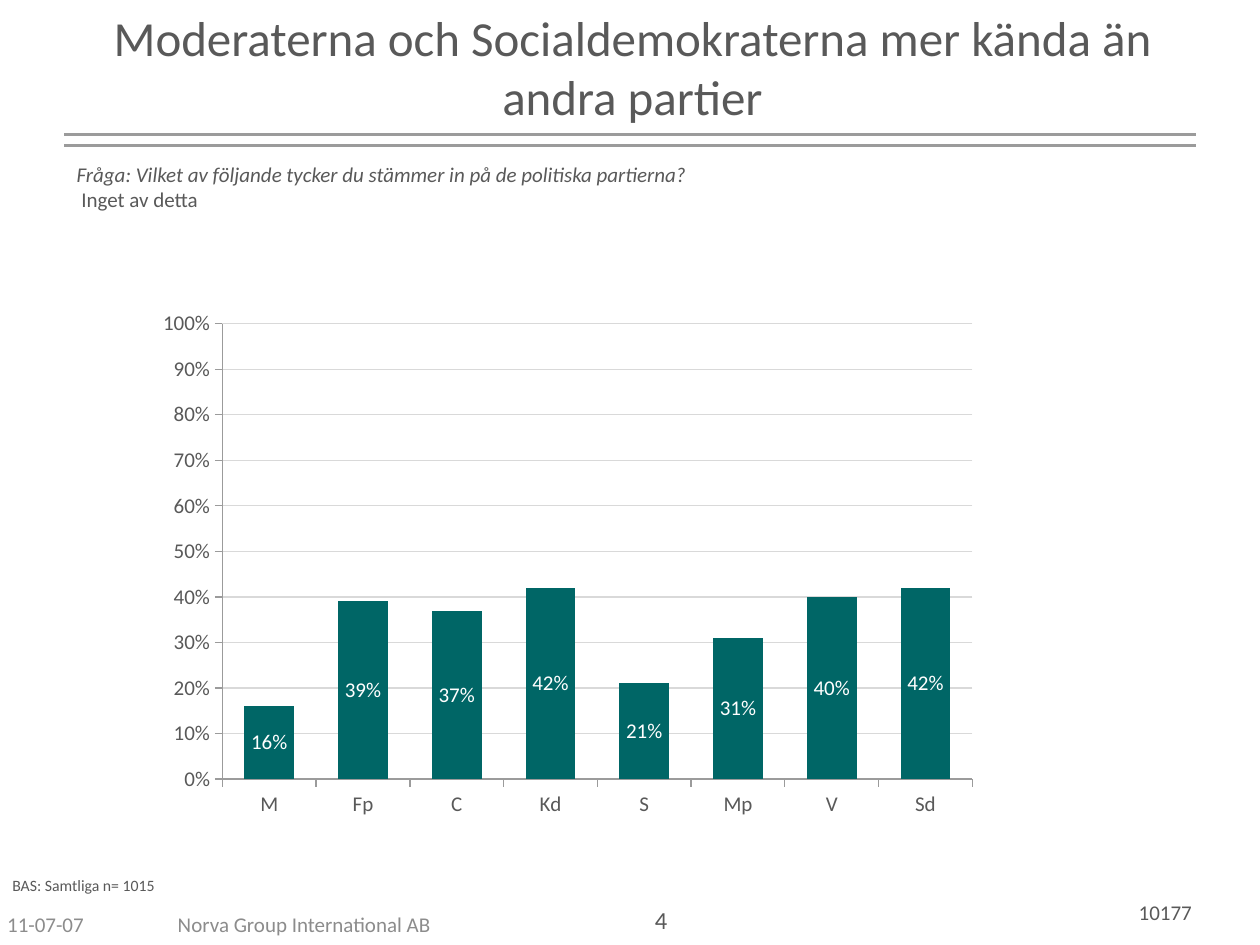
from lxml import etree
from pptx import Presentation
from pptx.chart.data import CategoryChartData
from pptx.dml.color import RGBColor
from pptx.enum.chart import XL_CHART_TYPE as ChartType, XL_LABEL_POSITION as LabelPosition
from pptx.enum.chart import XL_TICK_MARK as TickMark
from pptx.enum.shapes import MSO_CONNECTOR as Connector
from pptx.enum.text import MSO_ANCHOR as Anchor, PP_ALIGN as Align
from pptx.oxml import parse_xml
from pptx.oxml.ns import nsdecls, qn
from pptx.util import Pt

COLORS = {"text": "595959", "footer": "8C8C8C", "rule": "9B9B9B",
          "grid": "D9D9D9", "bar": "006666", "label": "FFFFFF"}
FONT = "Calibri"


def color(name):
    return RGBColor.from_string(COLORS[name])


def write(box, *parts, size=12, ink="text", align=Align.LEFT, anchor=Anchor.TOP, italics=()):
    frame = box.text_frame
    frame.word_wrap = True
    frame.vertical_anchor = anchor
    para = frame.paragraphs[0]
    para.alignment = align
    for index, part in enumerate(parts):
        if index:
            para.add_line_break()
        span = para.add_run()
        span.text = part
        span.font.name = FONT
        span.font.size = Pt(size)
        span.font.color.rgb = color(ink)
        span.font.italic = index in italics


deck = Presentation()
deck.slide_width, deck.slide_height = Pt(720), Pt(540)
page = deck.slides.add_slide(deck.slide_layouts[5])

for y in (77, 83):
    rule = page.shapes.add_connector(Connector.STRAIGHT, Pt(36.7), Pt(y), Pt(683.3), Pt(y))
    rule.line.color.rgb = color("rule")
    rule.line.width = Pt(1.5)
    etree.SubElement(rule._element.spPr, qn("a:effectLst"))

title = page.shapes.title
title.left, title.top, title.width, title.height = Pt(37.4), Pt(0.7), Pt(648), Pt(90)
write(title, "Moderaterna och Socialdemokraterna mer kända än andra partier",
      size=28, align=Align.CENTER)

texts = [
    ((36.7, 88.6, 646.6, 51), ["Fråga: Vilket av följande tycker du stämmer in på de politiska partierna?",
                               " Inget av detta"], {"italics": (0,)}),
    ((0, 496.8, 244, 18), ["BAS: Samtliga n= 1015"], {"size": 9}),
    ((-3, 513.4, 168, 28.8), ["11-07-07"], {"ink": "footer", "anchor": Anchor.MIDDLE}),
    ((59.8, 513.4, 228, 28.8), ["Norva Group International AB"],
     {"ink": "footer", "align": Align.CENTER, "anchor": Anchor.MIDDLE}),
    ((293.8, 513.4, 168, 28.8), ["4"], {"size": 14, "align": Align.CENTER}),
    ((501, 510.5, 187.2, 21.6), ["10177"], {"align": Align.RIGHT}),
]
for place, parts, style in texts:
    write(page.shapes.add_textbox(*map(Pt, place)), *parts, **style)

data = CategoryChartData(number_format="0%")
data.categories = ["M", "Fp", "C", "Kd", "S", "Mp", "V", "Sd"]
data.add_series("Series 1", [0.16, 0.39, 0.37, 0.42, 0.21, 0.31, 0.4, 0.42])
chart = page.shapes.add_chart(ChartType.COLUMN_STACKED, Pt(87.8), Pt(133.9),
                              Pt(553.7), Pt(357.1), data).chart
chart.has_title = False
chart.has_legend = False
chart.font.name = FONT
chart.font.size = Pt(18)
chart.font.color.rgb = color("text")

for axis in (chart.category_axis, chart.value_axis):
    axis.major_tick_mark = TickMark.OUTSIDE
    axis.minor_tick_mark = TickMark.NONE
    axis.format.line.color.rgb = color("rule")
    axis.tick_labels.font.name = FONT
    axis.tick_labels.font.size = Pt(12)
    axis.tick_labels.font.color.rgb = color("text")

scale = chart.value_axis
scale.minimum_scale, scale.maximum_scale, scale.major_unit = 0, 1, 0.1
scale.tick_labels.number_format = "0%"
scale.tick_labels.number_format_is_linked = False
scale.has_major_gridlines = True
scale.major_gridlines.format.line.color.rgb = color("grid")
scale.major_gridlines.format.line.width = Pt(0.75)

plot = chart.plots[0]
plot.gap_width, plot.overlap = 89, 100
plot.vary_by_categories = False
bars = plot.series[0]
bars.format.fill.solid()
bars.format.fill.fore_color.rgb = color("bar")
labels = bars.data_labels
labels.show_value = True
labels.position = LabelPosition.CENTER
labels.number_format = "0%"
labels.number_format_is_linked = False
labels.font.name = FONT
labels.font.size = Pt(12)
labels.font.color.rgb = color("label")

area = chart._chartSpace.chart.plotArea
for old in area.findall(qn("c:layout")):
    area.remove(old)
edges = "".join(f'<c:{edge}Mode val="edge"/>' for edge in "xy")
sizes = "".join(f'<c:{key} val="{value}"/>' for key, value in
                {"x": 0.071, "y": 0.143, "w": 0.774, "h": 0.729}.items())
area.insert(0, parse_xml(f'<c:layout {nsdecls("c")}><c:manualLayout><c:layoutTarget val="inner"/>'
                         f'{edges}{sizes}</c:manualLayout></c:layout>'))

deck.save("out.pptx")
